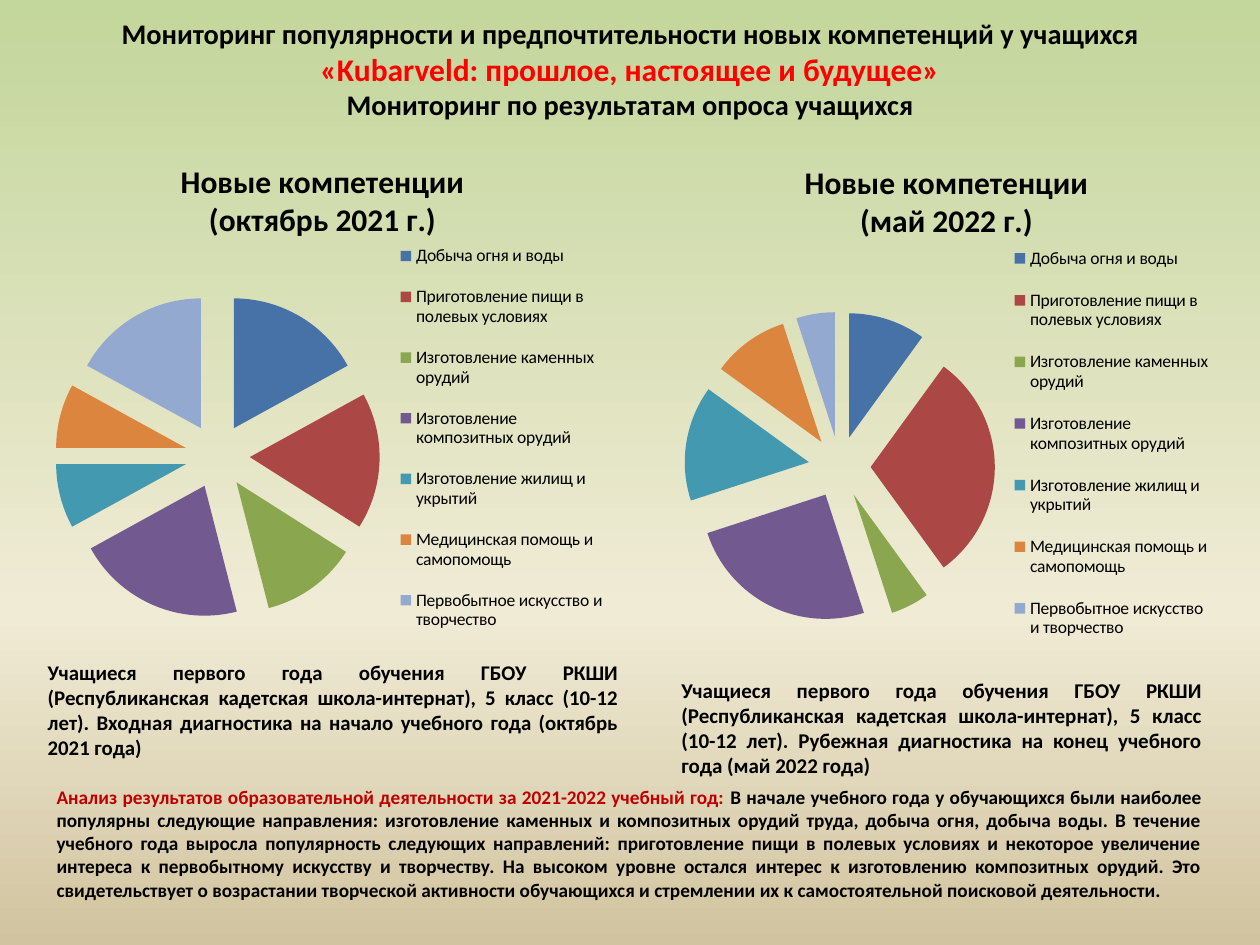
from pptx import Presentation
from pptx.chart.data import CategoryChartData as Data
from pptx.dml.color import RGBColor as Rgb
from pptx.enum.chart import XL_CHART_TYPE as Kind, XL_LEGEND_POSITION as Side
from pptx.enum.text import MSO_ANCHOR as Anchor, PP_ALIGN as Align
from pptx.oxml import parse_xml as to_xml
from pptx.oxml.ns import nsdecls as spaces
from pptx.util import Inches, Pt

WIDE, HIGH = Inches(10), Inches(7.5)
FACE = "Calibri"
HUES = {
    "black": "000000", "red": "FF0000", "wine": "C00000",
    "top": "C3D69B", "mid": "F0EBD5", "low": "D1C39F",
}
PARTS = {
    "Добыча огня и воды": "4672A8",
    "Приготовление пищи в полевых условиях": "AB4744",
    "Изготовление каменных орудий": "8AA64F",
    "Изготовление композитных орудий": "725990",
    "Изготовление жилищ и укрытий": "4299B0",
    "Медицинская помощь и самопомощь": "DC853E",
    "Первобытное искусство и творчество": "93A9CF",
}
SCHOOL = ("Учащиеся первого года обучения ГБОУ РКШИ "
          "(Республиканская кадетская школа-интернат), 5 класс (10-12 лет). ")
LEAD = "Анализ результатов образовательной деятельности за 2021-2022 учебный год: "
REVIEW = (
    "В начале учебного года у обучающихся были наиболее популярны следующие "
    "направления: изготовление каменных и композитных орудий труда, добыча огня, "
    "добыча воды. В течение учебного года выросла популярность следующих "
    "направлений: приготовление пищи в полевых условиях и некоторое увеличение "
    "интереса к первобытному искусству и творчеству. На высоком уровне остался "
    "интерес к изготовлению композитных орудий. Это свидетельствует о возрастании "
    "творческой активности обучающихся и стремлении их к самостоятельной "
    "поисковой деятельности."
)


def place(box):
    x, y, w, h = box
    return int(x * WIDE), int(y * HIGH), int(w * WIDE), int(h * HIGH)


def style(font, size, hue="black", bold=True):
    font.name, font.size, font.bold = FACE, Pt(size), bold
    font.color.rgb = Rgb.from_string(HUES[hue])


def paint(slide):
    stops = "".join(
        f'<a:gs pos="{pos}000"><a:srgbClr val="{HUES[key]}"/></a:gs>'
        for key, pos in (("top", 0), ("mid", 65), ("low", 100)))
    slide._element.cSld.insert(0, to_xml(
        f'<p:bg {spaces("p", "a")}><p:bgPr><a:gradFill rotWithShape="1">'
        f'<a:gsLst>{stops}</a:gsLst><a:lin ang="5400000" scaled="0"/>'
        '</a:gradFill><a:effectLst/></p:bgPr></p:bg>'))


def write(slide, box, lines, align, anchor):
    frame = slide.shapes.add_textbox(*place(box)).text_frame
    frame.word_wrap = True
    frame.vertical_anchor = anchor
    for i, line in enumerate(lines):
        para = frame.add_paragraph() if i else frame.paragraphs[0]
        para.alignment = align
        for text, size, hue in line:
            run = para.add_run()
            run.text = text
            style(run.font, size, hue)


def head(slide, box):
    write(slide, box, [
        [("Мониторинг популярности и предпочтительности новых компетенций у учащихся",
          16.2, "black")],
        [("«Kubarveld: прошлое, настоящее и будущее»", 18, "red")],
        [("Мониторинг по результатам опроса учащихся", 16.2, "black")],
    ], Align.CENTER, Anchor.TOP)


def note(slide, box, *runs):
    write(slide, box, [runs], Align.JUSTIFY, Anchor.BOTTOM)


def layout(x, y, w=None, h=None, inner=False):
    rows = [("xMode", "edge"), ("yMode", "edge"), ("x", x), ("y", y)]
    if inner:
        rows.insert(0, ("layoutTarget", "inner"))
    if w:
        rows += [("w", w), ("h", h)]
    body = "".join(f'<c:{tag} val="{val}"/>' for tag, val in rows)
    return to_xml(f'<c:layout {spaces("c")}><c:manualLayout>{body}'
                  '</c:manualLayout></c:layout>')


def fix(node, mark, spot):
    for old in node.findall(mark.tag):
        node.remove(old)
    node.insert(spot, mark)


def pie(slide, box, title, vals, tall):
    data = Data()
    data.categories = list(PARTS)
    data.add_series("Series 1", vals)
    chart = slide.shapes.add_chart(Kind.PIE_EXPLODED, *place(box), data).chart
    style(chart.font, 10, bold=False)

    chart.has_title = True
    chart.chart_title.include_in_layout = False
    frame = chart.chart_title.text_frame
    frame.text = title
    for para in frame.paragraphs:
        para.alignment = Align.CENTER
        for run in para.runs:
            style(run.font, 18)
    fix(chart.chart_title._element, layout(0.24, 0.03), 1)

    chart.has_legend = True
    chart.legend.position = Side.RIGHT
    chart.legend.include_in_layout = False
    style(chart.legend.font, 10, bold=False)
    fix(chart.legend._element, layout(0.62, 0.16, 0.36, 0.82), 1)

    plot = chart.plots[0]
    plot.vary_by_categories = True
    for i, hue in enumerate(PARTS.values()):
        fill = plot.series[0].points[i].format.fill
        fill.solid()
        fill.fore_color.rgb = Rgb.from_string(hue)
    area = chart._chartSpace.chart.plotArea
    fix(area, layout(0.03, round(0.61 - tall / 2, 2), 0.56, tall, True), 0)


def main():
    deck = Presentation()
    deck.slide_width, deck.slide_height = WIDE, HIGH
    slide = deck.slides.add_slide(deck.slide_layouts[6])
    paint(slide)
    head(slide, (0.05, 0.01, 0.9, 0.12))
    pie(slide, (0.03, 0.15, 0.46, 0.55), "Новые компетенции\n(октябрь 2021 г.)",
        (17, 17, 12, 21, 8, 8, 17), 0.63)
    pie(slide, (0.53, 0.15, 0.44, 0.56), "Новые компетенции\n(май 2022 г.)",
        (10, 30, 5, 25, 15, 10, 5), 0.59)
    note(slide, (0.028, 0.69, 0.472, 0.12),
         (SCHOOL + "Входная диагностика на начало учебного года (октябрь 2021 года)",
          11.9, "black"))
    note(slide, (0.531, 0.71, 0.433, 0.12),
         (SCHOOL + "Рубежная диагностика на конец учебного года (май 2022 года)",
          12, "black"))
    note(slide, (0.035, 0.84, 0.929, 0.12), (LEAD, 11, "wine"), (REVIEW, 11, "black"))
    deck.save("out.pptx")


if __name__ == "__main__":
    main()
